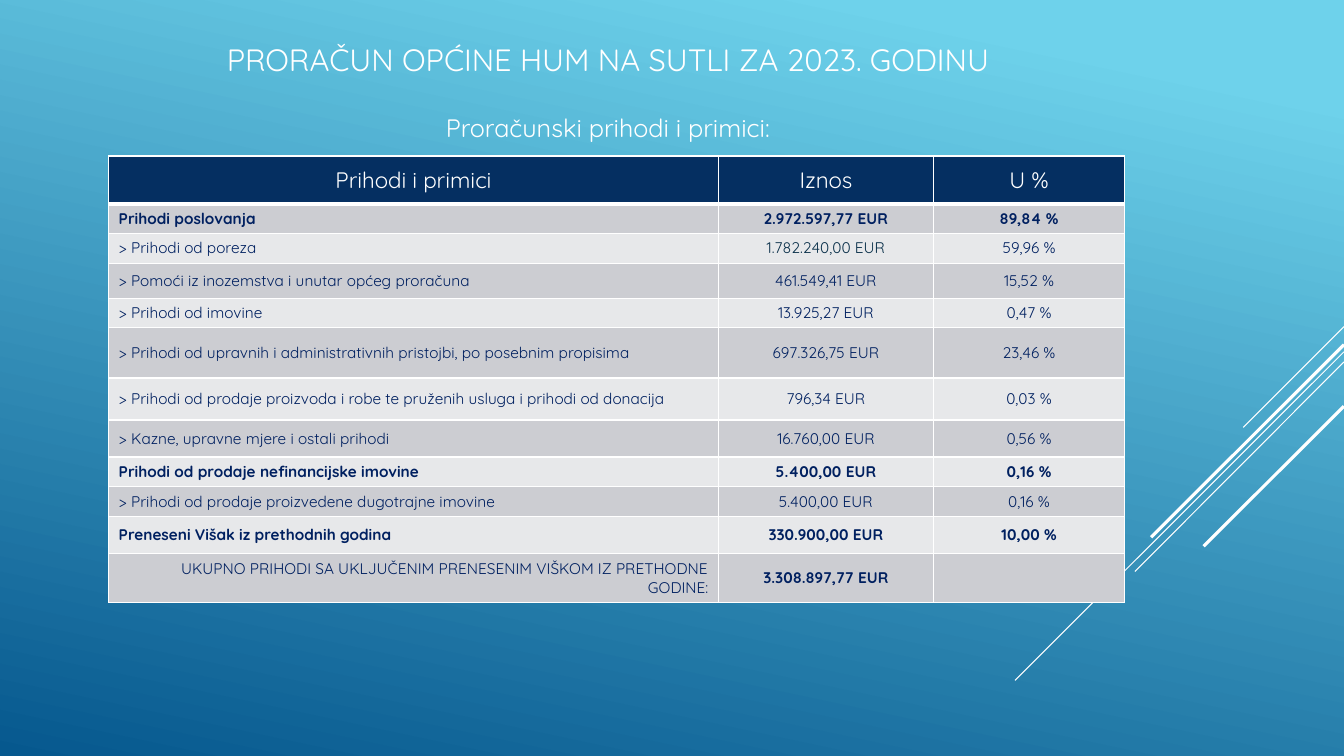
import pptx
import pptx.util
import pptx.dml.color
import pptx.enum.dml
import pptx.enum.shapes
import pptx.enum.text
import pptx.oxml
import pptx.oxml.ns

Pt = pptx.util.Pt
RGB = pptx.dml.color.RGBColor
ALIGN = pptx.enum.text.PP_ALIGN
MIDDLE = pptx.enum.text.MSO_ANCHOR.MIDDLE

FONT = "Quicksand"
WHITE = RGB(0xFF, 0xFF, 0xFF)
SKY = RGB(0x6E, 0xD2, 0xEB)
DEEP_BLUE = RGB(0x06, 0x58, 0x8E)
HEADER_NAVY = RGB(0x05, 0x2F, 0x61)
TEXT_NAVY = RGB(0x00, 0x20, 0x60)
TEXT_SLATE = RGB(0x0A, 0x30, 0x4A)
BAND_DARK = RGB(0xCC, 0xCD, 0xD2)
BAND_LIGHT = RGB(0xE7, 0xE8, 0xEA)

# Start x, start y, end x, end y, width
RAYS = [
    (960, 233.3, 888, 305.3, 0.75),
    (960, 251.3, 725, 486, 0.75),
    (960, 258.5, 810.7, 408.2, 0.75),
    (960, 246.2, 822.2, 383.8, 2.25),
    (960, 290.2, 859.7, 390.2, 2.25),
]

HEADERS = ["Prihodi i primici", "Iznos", "U %"]
COLUMN_WIDTHS = [435.6, 153.6, 136.6]
HEADER_HEIGHT = 34

# Revenue, amount, share, row height; sub-items start with ">"
REVENUES = [
    ("Prihodi poslovanja", "2.972.597,77 EUR", "89,84 %", 21),
    ("> Prihodi od poreza", "1.782.240,00 EUR", "59,96 %", 21.5),
    ("> Pomoći iz inozemstva i unutar općeg proračuna", "461.549,41 EUR", "15,52 %", 25),
    ("> Prihodi od imovine", "13.925,27 EUR", "0,47 %", 21),
    ("> Prihodi od upravnih i administrativnih pristojbi, po posebnim propisima",
     "697.326,75 EUR", "23,46 %", 36),
    ("> Prihodi od prodaje proizvoda i robe te pruženih usluga i prihodi od donacija",
     "796,34 EUR", "0,03 %", 30),
    ("> Kazne, upravne mjere i ostali prihodi", "16.760,00 EUR", "0,56 %", 26.5),
    ("Prihodi od prodaje nefinancijske imovine", "5.400,00 EUR", "0,16 %", 21),
    ("> Prihodi od prodaje proizvedene dugotrajne imovine", "5.400,00 EUR", "0,16 %", 21.5),
    ("Preneseni Višak iz prethodnih godina", "330.900,00 EUR", "10,00 %", 26.5),
    ("UKUPNO PRIHODI SA UKLJUČENIM PRENESENIM VIŠKOM IZ PRETHODNE GODINE:",
     "3.308.897,77 EUR", "", 35),
]


def add_run(paragraph, text, size, color, bold=False):
    run = paragraph.add_run()
    run.text = text
    run.font.name = FONT
    run.font.size = Pt(size)
    run.font.bold = bold
    run.font.color.rgb = color


def set_background(slide):
    fill = slide.background.fill
    fill.gradient()
    fill.gradient_angle = 258
    for stop, (position, color) in zip(fill.gradient_stops, [(0.1, SKY), (1, DEEP_BLUE)]):
        stop.position = position
        stop.color.rgb = color


def add_ray(slide, x1, y1, x2, y2, width):
    ray = slide.shapes.add_connector(
        pptx.enum.shapes.MSO_CONNECTOR.STRAIGHT, Pt(x1), Pt(y1), Pt(x2), Pt(y2))
    ray.line.color.rgb = WHITE
    ray.line.width = Pt(width)
    properties = ray._element.spPr
    properties.append(properties.makeelement(pptx.oxml.ns.qn("a:effectLst"), {}))


def fill_title(title):
    title.left, title.top, title.width, title.height = Pt(53.3), Pt(11.5), Pt(761.8), Pt(108)
    frame = title.text_frame
    frame.auto_size = pptx.enum.text.MSO_AUTO_SIZE.NONE
    frame.word_wrap = True
    frame.vertical_anchor = MIDDLE
    heading = frame.paragraphs[0]
    add_run(heading, "PRORAČUN OPĆINE HUM NA SUTLI ZA 2023. GODINU", 22, WHITE)
    subheading = frame.add_paragraph()
    subheading.space_before = Pt(25)
    add_run(subheading, "Proračunski prihodi i primici:", 18, WHITE)
    for paragraph in frame.paragraphs:
        paragraph.alignment = ALIGN.CENTER


def set_borders(cell, widths):
    properties = cell._tc.get_or_add_tcPr()
    for index, (side, width) in enumerate(widths.items()):
        properties.insert(index, pptx.oxml.parse_xml(
            f'<a:ln{side} {pptx.oxml.ns.nsdecls("a")} w="{Pt(width)}">'
            f'<a:solidFill><a:srgbClr val="{WHITE}"/></a:solidFill></a:ln{side}>'))


def fill_cell(cell, text, size, color, fill, align, bold=False, top=1, bottom=1):
    cell.fill.solid()
    cell.fill.fore_color.rgb = fill
    cell.vertical_anchor = MIDDLE
    set_borders(cell, {"L": 1, "R": 1, "T": top, "B": bottom})
    if text:
        paragraph = cell.text_frame.paragraphs[0]
        paragraph.alignment = align
        add_run(paragraph, text, size, color, bold)


def add_revenue_table(slide):
    heights = [HEADER_HEIGHT] + [revenue[-1] for revenue in REVENUES]
    table = slide.shapes.add_table(
        len(heights), len(HEADERS), Pt(77.6), Pt(111.5),
        Pt(sum(COLUMN_WIDTHS)), Pt(sum(heights))).table
    for column, width in zip(table.columns, COLUMN_WIDTHS):
        column.width = Pt(width)
    for row, height in zip(table.rows, heights):
        row.height = Pt(height)

    # Header row
    for column, header in enumerate(HEADERS):
        fill_cell(table.cell(0, column), header, 16, WHITE, HEADER_NAVY, ALIGN.CENTER, bottom=3)

    # Revenue rows
    last = len(REVENUES)
    for row, (revenue, amount, share, _) in enumerate(REVENUES, 1):
        band = BAND_DARK if row % 2 else BAND_LIGHT
        top = 3 if row == 1 else 1
        main_item = not revenue.startswith(">")
        label_align = ALIGN.RIGHT if row == last else ALIGN.LEFT
        amount_color = TEXT_SLATE if row == 2 else TEXT_NAVY
        fill_cell(table.cell(row, 0), revenue, 11, TEXT_NAVY, band, label_align,
                  main_item and row != last, top)
        fill_cell(table.cell(row, 1), amount, 11, amount_color, band, ALIGN.CENTER, main_item, top)
        fill_cell(table.cell(row, 2), share, 11, TEXT_NAVY, band, ALIGN.CENTER, main_item, top)


def main():
    deck = pptx.Presentation()
    deck.slide_width, deck.slide_height = Pt(960), Pt(540)
    slide = deck.slides.add_slide(deck.slide_layouts[5])

    # Backdrop
    set_background(slide)
    for ray in RAYS:
        add_ray(slide, *ray)

    # Content
    fill_title(slide.shapes.title)
    add_revenue_table(slide)
    deck.save("out.pptx")


if __name__ == "__main__":
    main()
